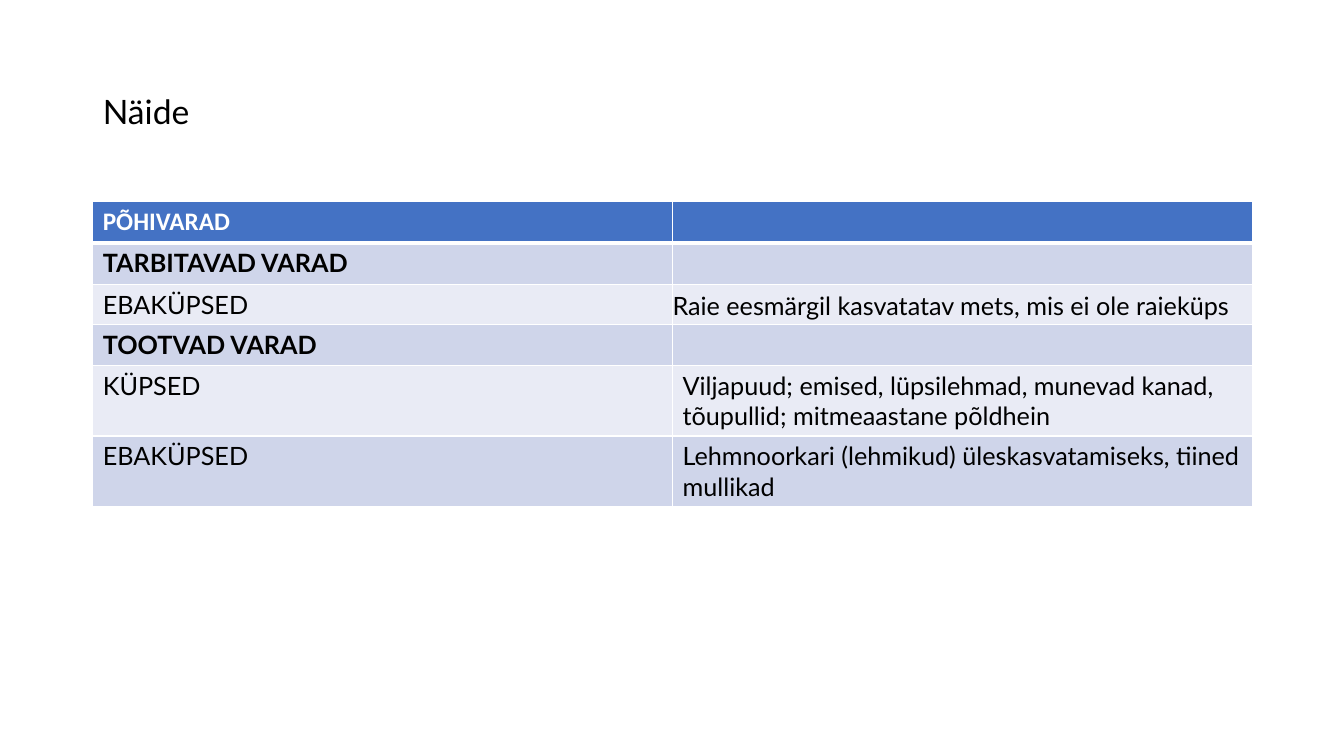
from dataclasses import dataclass

from lxml import etree
from pptx import Presentation
from pptx.dml.color import RGBColor
from pptx.enum.text import MSO_ANCHOR, PP_ALIGN
from pptx.oxml.ns import qn
from pptx.util import Inches, Pt

LEFT = PP_ALIGN.LEFT
TOP, MIDDLE = MSO_ANCHOR.TOP, MSO_ANCHOR.MIDDLE
TITLE_ONLY = 5


@dataclass(frozen=True)
class Theme:
    header: str = "4472C4"
    bands: tuple = ("CFD5EA", "E9EBF5")
    white: str = "FFFFFF"
    black: str = "000000"
    header_font: str = "Calibri"
    font: str = "Lato"
    title_size: int = 24
    table_size: int = 18
    rule: int = 1
    header_rule: int = 3


THEME = Theme()

ROWS = [
    ("PÕHIVARAD", ""),
    ("TARBITAVAD VARAD", ""),
    ("EBAKÜPSED", "Raie eesmärgil kasvatatav mets, mis ei ole raieküps"),
    ("TOOTVAD VARAD", ""),
    ("KÜPSED", "Viljapuud; emised, lüpsilehmad, munevad kanad, tõupullid; mitmeaastane põldhein"),
    ("EBAKÜPSED", "Lehmnoorkari (lehmikud) üleskasvatamiseks, tiined mullikad"),
]
ROW_HEIGHTS = [0.41, 0.41, 0.4, 0.4, 0.7, 0.7]
COLUMN_WIDTH = 5.75
FOREST_CELL = (2, 1)


def set_attributes(target, values):
    for name, value in values.items():
        setattr(target, name, value)


def write(tf, text, size, color, font, bold=False):
    p = tf.paragraphs[0]
    p.alignment = LEFT
    p.font.size = Pt(size)
    if text:
        r = p.add_run()
        r.text = text
        set_attributes(r.font, {"size": Pt(size), "name": font, "bold": bold})
        r.font.color.rgb = RGBColor.from_string(color)
    return p


def add_title(s, text):
    title = s.shapes.title
    set_attributes(title, {"left": Inches(0.92), "top": Inches(0.4),
                           "width": Inches(11.5), "height": Inches(1.45)})
    tf = title.text_frame
    set_attributes(tf, {"vertical_anchor": MIDDLE, "word_wrap": True})
    p = write(tf, text, THEME.title_size, THEME.black, THEME.font)
    p.line_spacing = 0.9


def set_borders(cell, widths):
    """Draw white cell edges; widths maps L, R, T and B to points."""
    tc_pr = cell._tc.get_or_add_tcPr()
    for i, (side, width) in enumerate(widths.items()):
        ln = etree.Element(qn(f"a:ln{side}"), w=str(Pt(width)))
        fill = etree.SubElement(ln, qn("a:solidFill"))
        etree.SubElement(fill, qn("a:srgbClr"), val=THEME.white)
        tc_pr.insert(i, ln)


def format_cell(cell, row, text, bold):
    is_header = row == 0
    fill = THEME.header if is_header else THEME.bands[(row - 1) % 2]
    cell.fill.solid()
    cell.fill.fore_color.rgb = RGBColor.from_string(fill)
    cell.vertical_anchor = TOP
    set_borders(cell, {
        "L": THEME.rule,
        "R": THEME.rule,
        "T": THEME.header_rule if row == 1 else THEME.rule,
        "B": THEME.header_rule if is_header else THEME.rule,
    })
    return write(cell.text_frame, text, THEME.table_size,
                 THEME.white if is_header else THEME.black,
                 THEME.header_font if is_header else THEME.font, bold)


def add_assets_table(s):
    frame = s.shapes.add_table(len(ROWS), 2, Inches(0.92), Inches(2),
                               Inches(2 * COLUMN_WIDTH), Inches(sum(ROW_HEIGHTS)))
    table = frame.table
    for column in table.columns:
        column.width = Inches(COLUMN_WIDTH)
    for i, (texts, height) in enumerate(zip(ROWS, ROW_HEIGHTS)):
        table.rows[i].height = Inches(height)
        is_heading = not texts[1]
        for j, text in enumerate(texts):
            cell = table.cell(i, j)
            p = format_cell(cell, i, text, is_heading)
            if (i, j) == FOREST_CELL:
                set_attributes(cell, {"vertical_anchor": MIDDLE, "margin_left": 0,
                                      "margin_right": 0, "margin_top": 0,
                                      "margin_bottom": 0})
                set_attributes(p, {"line_spacing": 1.07, "space_after": Pt(8)})


def main():
    prs = Presentation()
    set_attributes(prs, {"slide_width": Inches(13.33), "slide_height": Inches(7.5)})
    s = prs.slides.add_slide(prs.slide_layouts[TITLE_ONLY])
    add_title(s, "Näide")
    add_assets_table(s)
    prs.save("out.pptx")


if __name__ == "__main__":
    main()
